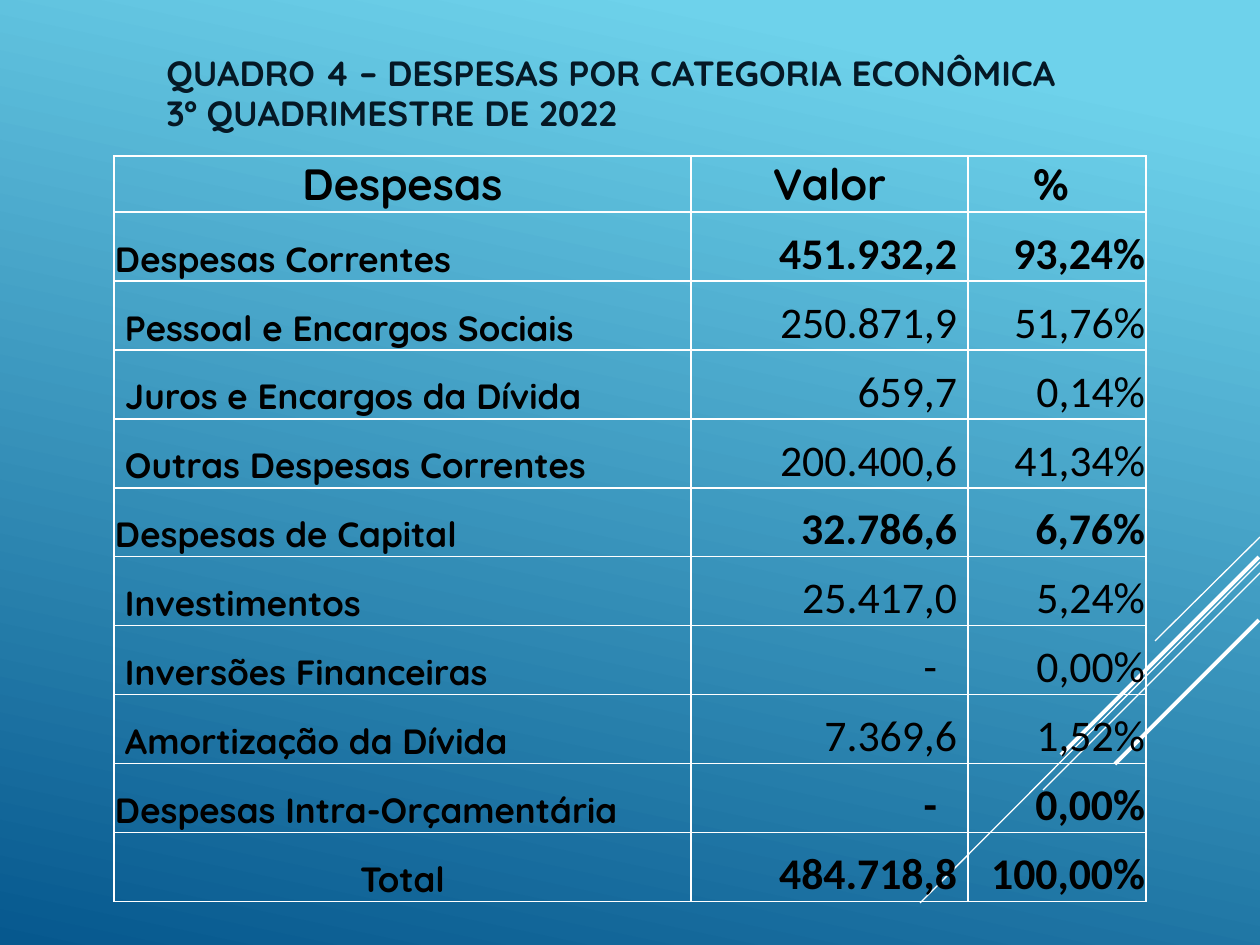
from pptx import Presentation
from pptx import util as u
from pptx.dml.color import RGBColor
from pptx.enum import shapes, text
from pptx.oxml.ns import qn
from lxml import etree

PX = u.Inches(1) / 126
SKY = RGBColor(0x6E, 0xD2, 0xEB)
DEEP_BLUE = RGBColor(0x06, 0x58, 0x8E)
NAVY = RGBColor(0x05, 0x18, 0x25)
BLACK = RGBColor(0, 0, 0)
WHITE = RGBColor(0xFF, 0xFF, 0xFF)
HEADING, FIGURES = "Quicksand", "Calibri"
LEFT, CENTER, RIGHT = text.PP_ALIGN.LEFT, text.PP_ALIGN.CENTER, text.PP_ALIGN.RIGHT


def px(length):
    return u.Emu(round(length * PX))


class Board:
    def __init__(self, slide):
        self.slide = slide

    def background(self, start, end, angle):
        fill = self.slide.background.fill
        fill.gradient()
        fill.gradient_angle = 360 - angle
        for stop, color, position in zip(fill.gradient_stops, (start, end), (0.1, 1)):
            stop.color.rgb = color
            stop.position = position

    def line(self, x1, y1, x2, y2, weight):
        stroke = self.slide.shapes.add_connector(
            shapes.MSO_CONNECTOR.STRAIGHT, px(x1), px(y1), px(x2), px(y2))
        stroke.line.color.rgb = WHITE
        stroke.line.width = u.Pt(weight)
        etree.SubElement(stroke._element.spPr, qn("a:effectLst"))

    def style(self, paragraph, font, size, color, bold, align=LEFT):
        paragraph.alignment = align
        paragraph.font.name = font
        paragraph.font.size = u.Pt(size)
        paragraph.font.color.rgb = color
        paragraph.font.bold = bold

    def title(self, words, x, y, w, h):
        frame = self.slide.shapes.add_textbox(px(x), px(y), px(w), px(h)).text_frame
        frame.word_wrap = True
        frame.vertical_anchor = text.MSO_ANCHOR.MIDDLE
        heading = frame.paragraphs[0]
        heading.text = words
        heading.line_spacing = 0.95
        self.style(heading, HEADING, 20, NAVY, True)

    def table(self, x, y, widths, heights):
        grid = self.slide.shapes.add_table(
            len(heights), len(widths), px(x), px(y), px(sum(widths)), px(sum(heights))).table
        grid.first_row = grid.horz_banding = False
        for column, width in zip(grid.columns, widths):
            column.width = px(width)
        for row, height in zip(grid.rows, heights):
            row.height = px(height)
        return grid

    def cell(self, cell, words, font, size, bold, align, anchor, left=1, right=1):
        cell.text = words
        cell.vertical_anchor = anchor
        cell.margin_left, cell.margin_right = px(left), px(right)
        cell.margin_top, cell.margin_bottom = px(1), 0
        cell.fill.background()
        self.style(cell.text_frame.paragraphs[0], font, size, BLACK, bold, align)
        self.borders(cell)

    def borders(self, cell):
        properties = cell._tc.get_or_add_tcPr()
        for place, side in enumerate(("lnL", "lnR", "lnT", "lnB")):
            edge = etree.Element(qn(f"a:{side}"), w=str(u.Pt(1)))
            solid = etree.SubElement(edge, qn("a:solidFill"))
            etree.SubElement(solid, qn("a:srgbClr"), val=str(WHITE))
            properties.insert(place, edge)


# Expense, value, share, and whether the row is a category total
EXPENSES = [
    ("Despesas Correntes", "451.932,2", "93,24%", True),
    ("Pessoal e Encargos Sociais", "250.871,9", "51,76%", False),
    ("Juros e Encargos da Dívida", "659,7", "0,14%", False),
    ("Outras Despesas Correntes", "200.400,6", "41,34%", False),
    ("Despesas de Capital", "32.786,6", "6,76%", True),
    ("Investimentos", "25.417,0", "5,24%", False),
    ("Inversões Financeiras", "-", "0,00%", False),
    ("Amortização da Dívida", "7.369,6", "1,52%", False),
    ("Despesas Intra-Orçamentária", "-", "0,00%", True),
    ("Total", "484.718,8", "100,00%", True),
]
STREAKS = [
    (1260, 537, 1155, 641, 0.75),
    (1260, 562, 920, 903, 0.75),
    (1260, 573, 1043, 790, 0.75),
    (1259, 557, 1061, 755, 2.25),
    (1259, 620, 1115, 764, 2.25),
]


def main():
    deck = Presentation()
    deck.slide_width, deck.slide_height = px(1260), px(945)
    board = Board(deck.slides.add_slide(deck.slide_layouts[6]))

    # Backdrop with diagonal streaks
    board.background(SKY, DEEP_BLUE, 102)
    for streak in STREAKS:
        board.line(*streak)

    board.title("QUADRO 4 – DESPESAS POR CATEGORIA ECONÔMICA\v3º QUADRIMESTRE DE 2022",
                154, 45, 1071, 100)

    # Table header
    budget = board.table(114, 156, (577, 277, 178), [56] + [69] * len(EXPENSES))
    for column, (label, right) in enumerate((("Despesas", 1), ("Valor", 1), ("%", 13))):
        board.cell(budget.cell(0, column), label, HEADING, 25, True, CENTER,
                   text.MSO_ANCHOR.MIDDLE, right=right)

    # Expense rows: items are indented under their category
    bottom = text.MSO_ANCHOR.BOTTOM
    for row, (expense, value, share, is_total) in enumerate(EXPENSES, 1):
        board.cell(budget.cell(row, 0), expense, HEADING, 20, True,
                   CENTER if expense == "Total" else LEFT, bottom,
                   left=1 if is_total else 11)
        board.cell(budget.cell(row, 1), value, FIGURES, 25, is_total, RIGHT, bottom,
                   right=31 if value == "-" else 11)
        board.cell(budget.cell(row, 2), share, FIGURES, 25, is_total, RIGHT, bottom)

    deck.save("out.pptx")


if __name__ == "__main__":
    main()
